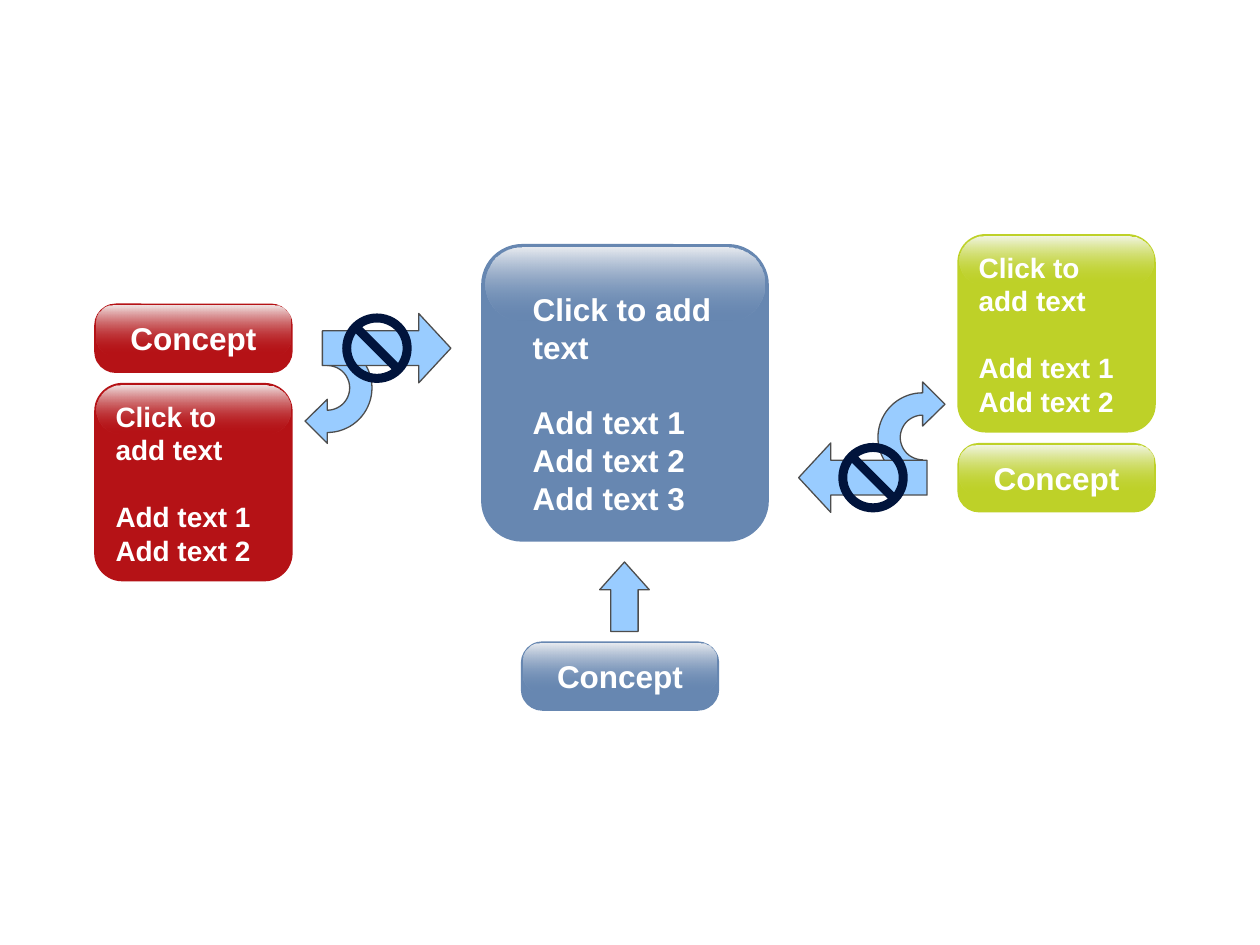
"""Build a concept slide with glossy boxes, arrows and blocked paths."""
import math

import lxml.etree
import pptx
import pptx.dml.color
import pptx.enum.shapes
import pptx.enum.text
import pptx.oxml.ns
import pptx.util

Cm = pptx.util.Cm
Pt = pptx.util.Pt
RGBColor = pptx.dml.color.RGBColor
SHAPE = pptx.enum.shapes.MSO_SHAPE
ALIGN = pptx.enum.text.PP_ALIGN

WHITE = RGBColor(0xFF, 0xFF, 0xFF)
NAVY = RGBColor(0x01, 0x14, 0x3C)
SKY = RGBColor(0x99, 0xCC, 0xFF)
GRAY = RGBColor(0x4D, 0x4D, 0x4D)
RED = RGBColor(0xB5, 0x12, 0x16)
LIME = RGBColor(0xBE, 0xD1, 0x28)
BLUE = RGBColor(0x67, 0x87, 0xB1)
HIGHLIGHTS = {
    RED: RGBColor(0xF1, 0xE5, 0xE5),
    LIME: RGBColor(0xF2, 0xF6, 0xE5),
    BLUE: RGBColor(0xE8, 0xEB, 0xF0),
}
SMALL = 4.0
BAR = 1.4


def paint(shape, fill=None, line=None):
    """Give a shape its flat fill and optional outline."""
    shape.shadow.inherit = False
    if fill is not None:
        shape.fill.solid()
        shape.fill.fore_color.rgb = fill
    if line is None:
        shape.line.fill.background()
    else:
        shape.line.color.rgb = line
        shape.line.width = Pt(0.75)


def add_preset(slide, kind, left, top, width, height, adjustments, fill=None, line=None):
    """Add a preset shape measured in centimetres."""
    shape = slide.shapes.add_shape(kind, Cm(left), Cm(top), Cm(width), Cm(height))
    for index, value in enumerate(adjustments):
        shape.adjustments[index] = value
    paint(shape, fill, line)
    return shape


def add_glossy_box(slide, left, top, width, height, color, rounding,
                   inset=0.05, gloss_height=0.97, gloss_rounding=0.5):
    """Add a rounded box with a highlight that fades out downwards."""
    add_preset(slide, SHAPE.ROUNDED_RECTANGLE, left, top, width, height, [rounding], color)
    gloss = add_preset(slide, SHAPE.ROUNDED_RECTANGLE, left + inset, top + inset,
                       width - 2 * inset, gloss_height, [gloss_rounding])
    gloss.fill.gradient()
    gloss.fill.gradient_angle = 270
    for stop, stop_color in zip(gloss.fill.gradient_stops, (HIGHLIGHTS[color], color)):
        stop.color.rgb = stop_color
    end_color = gloss.element.xpath(".//a:gs/a:srgbClr")[-1]
    lxml.etree.SubElement(end_color, pptx.oxml.ns.qn("a:alpha"), val="0")


def add_text(slide, lines, left, top, width, height, size=18, align=ALIGN.LEFT):
    """Add bold white lines, with a one-line gap after the first."""
    frame = slide.shapes.add_textbox(Cm(left), Cm(top), Cm(width), Cm(height)).text_frame
    frame.word_wrap = True
    for index, line in enumerate(lines):
        paragraph = frame.paragraphs[0] if index == 0 else frame.add_paragraph()
        paragraph.alignment = align
        paragraph.line_spacing = Pt(1.2 * size)
        if index == 1:
            paragraph.space_before = Pt(1.2 * size)
        run = paragraph.add_run()
        run.text = line
        run.font.name = "Arial"
        run.font.size = Pt(size)
        run.font.bold = True
        run.font.color.rgb = WHITE


def item_lines(count):
    """Return the prompt followed by numbered items."""
    return ["Click to add text"] + [f"Add text {number}" for number in range(1, count + 1)]


def add_card(slide, left, top, color):
    """Add a small square card with two items."""
    add_glossy_box(slide, left, top, SMALL, SMALL, color, 0.142)
    add_text(slide, item_lines(2), left + 0.18, top + 0.2, 3.6, 3.66, size=16)


def add_concept(slide, left, top, color):
    """Add a concept bar with a centred label."""
    add_glossy_box(slide, left, top, SMALL, BAR, color, 0.312, gloss_rounding=0.339)
    add_text(slide, ["Concept"], left, top + 0.19, SMALL, 1.02, align=ALIGN.CENTER)


def add_return_arrow(slide, center_x, center_y, direction):
    """Add a half-ring arrow; direction -1 turns it by half a circle."""
    angles = [math.radians(90 - 5 * step) for step in range(37)]
    inner = [(0.45 * math.cos(angle), 0.45 * math.sin(angle)) for angle in angles]
    outer = [(0.9 * math.cos(angle), 0.9 * math.sin(angle)) for angle in reversed(angles)]
    head = [(0, 1.12), (-0.45, 0.67), (0, 0.23)]
    points = [(Cm(center_x + direction * x), Cm(center_y + direction * y))
              for x, y in inner + outer + head]
    builder = slide.shapes.build_freeform(*points[0])
    builder.add_line_segments(points[1:], close=True)
    paint(builder.convert_to_shape(), SKY, GRAY)


def add_blocked_path(slide, kind, left, top, sign_left, center, direction):
    """Add a return arrow and a straight arrow crossed by a stop sign."""
    add_return_arrow(slide, *center, direction)
    add_preset(slide, kind, left, top, 2.59, BAR, [0.5, 0.463], SKY, GRAY)
    add_preset(slide, SHAPE.NO_SYMBOL, sign_left, top, BAR, BAR, [0.13], NAVY)


def main():
    """Build and save the presentation."""
    presentation = pptx.Presentation()
    presentation.slide_width = Cm(25.4)
    presentation.slide_height = Cm(19.05)
    slide = presentation.slides.add_slide(presentation.slide_layouts[6])

    add_preset(slide, SHAPE.UP_ARROW, 12.09, 11.33, 1.0, BAR, [0.551, 0.559], SKY, GRAY)
    add_blocked_path(slide, SHAPE.RIGHT_ARROW, 6.5, 6.32, 6.9, (6.6, 7.82), 1)
    add_blocked_path(slide, SHAPE.LEFT_ARROW, 16.1, 8.93, 16.9, (18.6, 8.82), -1)

    add_card(slide, 1.9, 7.72, RED)
    add_card(slide, 19.3, 4.72, LIME)
    add_glossy_box(slide, 9.7, 4.92, 5.8, 6.0, BLUE, 0.142, inset=0.08, gloss_height=1.47)
    add_text(slide, item_lines(3), 10.49, 5.72, 4.6, 4.83)

    for left, top, color in ((1.9, 6.12, RED), (10.5, 12.93, BLUE), (19.3, 8.93, LIME)):
        add_concept(slide, left, top, color)

    presentation.save("out.pptx")


if __name__ == "__main__":
    main()
